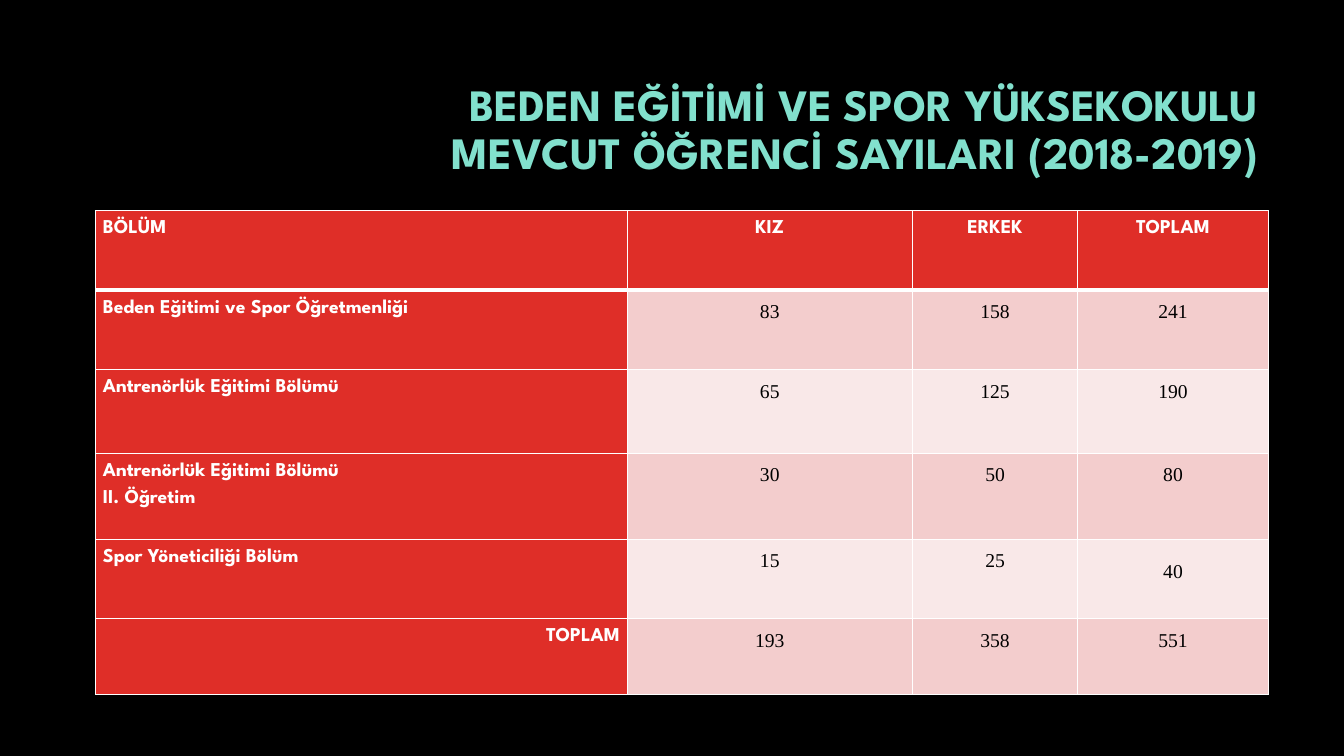
"""Build the student numbers slide of the school of physical education and sport."""
from dataclasses import dataclass

from lxml.etree import SubElement
from pptx import Presentation
from pptx.dml.color import RGBColor
from pptx.enum.text import MSO_ANCHOR, PP_ALIGN
from pptx.oxml.ns import qn
from pptx.slide import Slide
from pptx.table import _Cell
from pptx.util import Inches, Pt

BLACK = RGBColor(0x00, 0x00, 0x00)
WHITE = RGBColor(0xFF, 0xFF, 0xFF)
MINT = RGBColor(0x82, 0xE0, 0xCD)
RED = RGBColor(0xDF, 0x2E, 0x28)
ROSE = RGBColor(0xF3, 0xCD, 0xCD)
PALE_ROSE = RGBColor(0xF9, 0xE8, 0xE8)

HEADING_FONT = "League Spartan"
NUMBER_FONT = "Times New Roman"
TITLE = "BEDEN EĞİTİMİ VE SPOR YÜKSEKOKULU MEVCUT ÖĞRENCİ SAYILARI (2018-2019)"
COLUMN_WIDTHS = (5.27, 2.83, 1.64, 1.89)


@dataclass(frozen=True)
class TableRow:
    """One row of the table: its height, first cell and other cells."""
    height: float
    label: str
    values: tuple[str, ...]
    label_alignment: PP_ALIGN = PP_ALIGN.JUSTIFY


ROWS = (
    TableRow(0.79, "BÖLÜM", ("KIZ", "ERKEK", "TOPLAM"), PP_ALIGN.LEFT),
    TableRow(0.79, "Beden Eğitimi ve Spor Öğretmenliği", ("83", "158", "241")),
    TableRow(0.83, "Antrenörlük Eğitimi Bölümü", ("65", "125", "190")),
    TableRow(0.85, "Antrenörlük Eğitimi Bölümü\nII. Öğretim", ("30", "50", "80")),
    TableRow(0.79, "Spor Yöneticiliği Bölüm", ("15", "25", "40")),
    TableRow(0.75, "TOPLAM", ("193", "358", "551"), PP_ALIGN.RIGHT),
)


def add_title(page: Slide) -> None:
    """Add the right-aligned heading."""
    box = page.shapes.add_textbox(Inches(3.17), Inches(0.84), Inches(9.42), Inches(1.41))
    frame = box.text_frame
    frame.word_wrap = True
    frame.vertical_anchor = MSO_ANCHOR.MIDDLE
    frame.margin_bottom = Inches(0.54)
    para = frame.paragraphs[0]
    para.text = TITLE
    para.alignment = PP_ALIGN.RIGHT
    para.line_spacing = 0.9
    para.font.name = HEADING_FONT
    para.font.size = Pt(32)
    para.font.bold = True
    para.font.color.rgb = MINT


def set_borders(cell: _Cell, top: float, bottom: float) -> None:
    """Draw white lines around a cell, with widths in points."""
    properties = cell._tc.get_or_add_tcPr()
    widths = {"a:lnL": 1, "a:lnR": 1, "a:lnT": top, "a:lnB": bottom}
    for position, (tag, width) in enumerate(widths.items()):
        line = SubElement(properties, qn(tag), w=str(Pt(width)))
        fill = SubElement(line, qn("a:solidFill"))
        SubElement(fill, qn("a:srgbClr"), val=str(WHITE))
        properties.insert(position, line)


def fill_cell(cell: _Cell, text: str, alignment: PP_ALIGN, heading: bool, fill: RGBColor) -> None:
    """Write and format one cell."""
    cell.text = text
    cell.margin_left = cell.margin_right = Inches(0.07)
    cell.margin_top = cell.margin_bottom = 0
    cell.fill.solid()
    cell.fill.fore_color.rgb = fill
    for para in cell.text_frame.paragraphs:
        para.alignment = alignment
        para.line_spacing = 1.5
        para.font.name = HEADING_FONT if heading else NUMBER_FONT
        para.font.size = Pt(14)
        para.font.bold = heading
        para.font.color.rgb = WHITE if heading else BLACK


def add_student_table(page: Slide) -> None:
    """Add the table of students by department."""
    frame = page.shapes.add_table(
        len(ROWS), len(COLUMN_WIDTHS), Inches(0.95), Inches(2.09),
        Inches(sum(COLUMN_WIDTHS)), Inches(sum(row.height for row in ROWS)),
    )
    table = frame.table
    table.first_col = True
    for column, width in zip(table.columns, COLUMN_WIDTHS):
        column.width = Inches(width)
    for row_index, row in enumerate(ROWS):
        table.rows[row_index].height = Inches(row.height)
        band = ROSE if row_index % 2 else PALE_ROSE
        for column_index, text in enumerate((row.label, *row.values)):
            cell = table.cell(row_index, column_index)
            heading = row_index == 0 or column_index == 0
            alignment = PP_ALIGN.CENTER if column_index else row.label_alignment
            fill_cell(cell, text, alignment, heading, RED if heading else band)
            set_borders(cell, 3 if row_index == 1 else 1, 3 if row_index == 0 else 1)
    lowered_cell = table.cell(4, 3)
    lowered_cell.margin_top = Inches(0.22)
    lowered_cell.text_frame.paragraphs[0].line_spacing = 1.0


def main() -> None:
    """Create and save the deck."""
    deck = Presentation()
    deck.slide_width = Inches(13.33)
    deck.slide_height = Inches(7.5)
    page = deck.slides.add_slide(deck.slide_layouts[6])
    page.background.fill.solid()
    page.background.fill.fore_color.rgb = BLACK
    add_title(page)
    add_student_table(page)
    deck.save("out.pptx")


if __name__ == "__main__":
    main()
